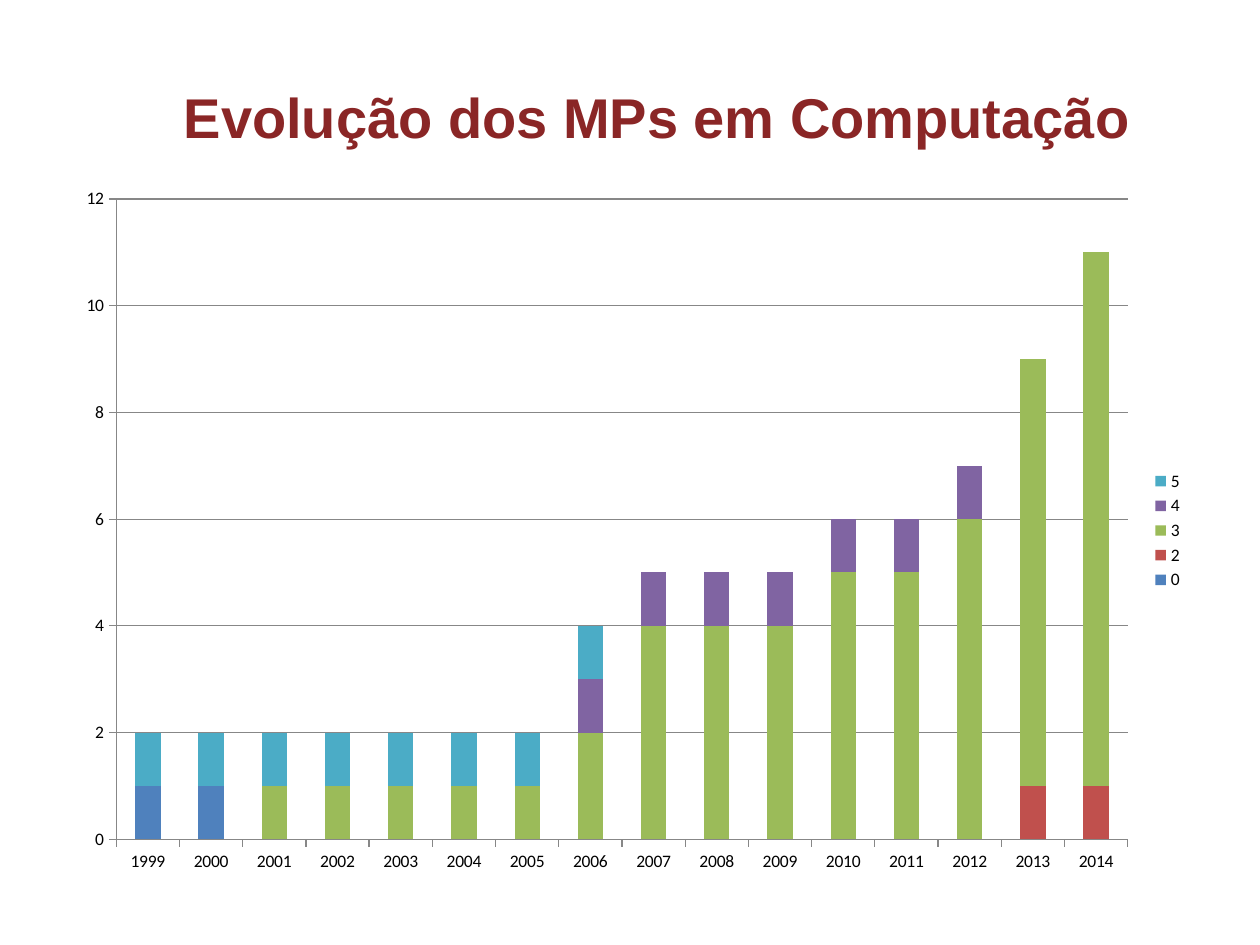
from dataclasses import dataclass
from typing import Any

from lxml.etree import SubElement
from pptx import Presentation
from pptx.chart.data import CategoryChartData
from pptx.dml.color import RGBColor
from pptx.enum.chart import XL_CHART_TYPE, XL_LEGEND_POSITION, XL_TICK_MARK
from pptx.enum.text import MSO_ANCHOR, PP_ALIGN
from pptx.oxml.ns import qn
from pptx.util import Inches, Pt

COLOURS = {
    "title": "8A2626", "text": "000000", "line": "878787",
    "0": "4F81BD", "2": "C0504D", "3": "9BBB59", "4": "8064A2", "5": "4BACC6",
}
YEARS = [str(year) for year in range(1999, 2015)]
# Number of programmes per year, by grade
GRADES = {
    "0": [1] * 2 + [None] * 14,
    "2": [None] * 14 + [1] * 2,
    "3": [None] * 2 + [1] * 5 + [2, 4, 4, 4, 5, 5, 6, 8, 10],
    "4": [None] * 5 + [0] * 2 + [1] * 7 + [0] * 2,
    "5": [1] * 8 + [None] * 8,
}
# Share of the chart area taken by the plot
PLOT_SHARES = {"x": 0.046, "y": 0.034, "w": 0.894, "h": 0.9}


def colour(name):
    return RGBColor.from_string(COLOURS[name])


def apply(target, values):
    for name, value in values.items():
        setattr(target, name, value)


@dataclass
class SlideBuilder:
    deck: Any
    page: Any

    def area(self, left, top, width, height):
        """Turn shares of the slide's size into lengths."""
        across, down = self.deck.slide_width, self.deck.slide_height
        return (round(left * across), round(top * down),
                round(width * across), round(height * down))

    def title(self, text, shares):
        box = self.page.shapes.add_textbox(*self.area(*shares))
        apply(box.text_frame, {"word_wrap": True,
                               "vertical_anchor": MSO_ANCHOR.MIDDLE})
        para = box.text_frame.paragraphs[0]
        para.alignment = PP_ALIGN.LEFT
        span = para.add_run()
        span.text = text
        apply(span.font, {"name": "Arial", "size": Pt(32), "bold": True})
        span.font.color.rgb = colour("title")

    def stacked_columns(self, categories, series, shares):
        data = CategoryChartData()
        data.categories = categories
        for name, values in series.items():
            data.add_series(name, values)
        chart = self.page.shapes.add_chart(
            XL_CHART_TYPE.COLUMN_STACKED, *self.area(*shares), data).chart
        apply(chart, {"has_title": False, "has_legend": True})
        apply(chart.font, {"name": "Calibri", "size": Pt(10)})
        chart.font.color.rgb = colour("text")
        apply(chart.legend, {"position": XL_LEGEND_POSITION.RIGHT,
                             "include_in_layout": False})

        # Columns
        plot = chart.plots[0]
        apply(plot, {"gap_width": 150, "overlap": 100, "vary_by_categories": False})
        for column in plot.series:
            column.format.fill.solid()
            column.format.fill.fore_color.rgb = colour(column.name)

        # Axes and gridlines
        apply(chart.value_axis, {"minimum_scale": 0, "maximum_scale": 12,
                                 "major_unit": 2, "has_major_gridlines": True})
        for axis in (chart.category_axis, chart.value_axis):
            apply(axis, {"major_tick_mark": XL_TICK_MARK.OUTSIDE,
                         "minor_tick_mark": XL_TICK_MARK.NONE})
        for part in (chart.category_axis, chart.value_axis,
                     chart.value_axis.major_gridlines):
            part.format.line.width = Pt(0.75)
            part.format.line.color.rgb = colour("line")
        self.place_plot(chart)

    def place_plot(self, chart):
        plot_area = chart.plots[0]._element.getparent()
        for old in plot_area.findall(qn("c:layout")):
            plot_area.remove(old)
        layout = SubElement(plot_area, qn("c:layout"))
        plot_area.insert(0, layout)
        manual = SubElement(layout, qn("c:manualLayout"))
        settings = {"layoutTarget": "inner", "xMode": "edge", "yMode": "edge",
                    **PLOT_SHARES}
        for tag, value in settings.items():
            SubElement(manual, qn(f"c:{tag}")).set("val", str(value))


def main():
    deck = Presentation()
    apply(deck, {"slide_width": Inches(10), "slide_height": Inches(7.5)})
    page = deck.slides.add_slide(deck.slide_layouts[6])
    builder = SlideBuilder(deck, page)
    builder.title("Evolução dos MPs em Computação", (0.136, 0.039, 0.812, 0.167))
    builder.stacked_columns(YEARS, GRADES, (0.051, 0.185, 0.898, 0.753))
    deck.save("out.pptx")


if __name__ == "__main__":
    main()
